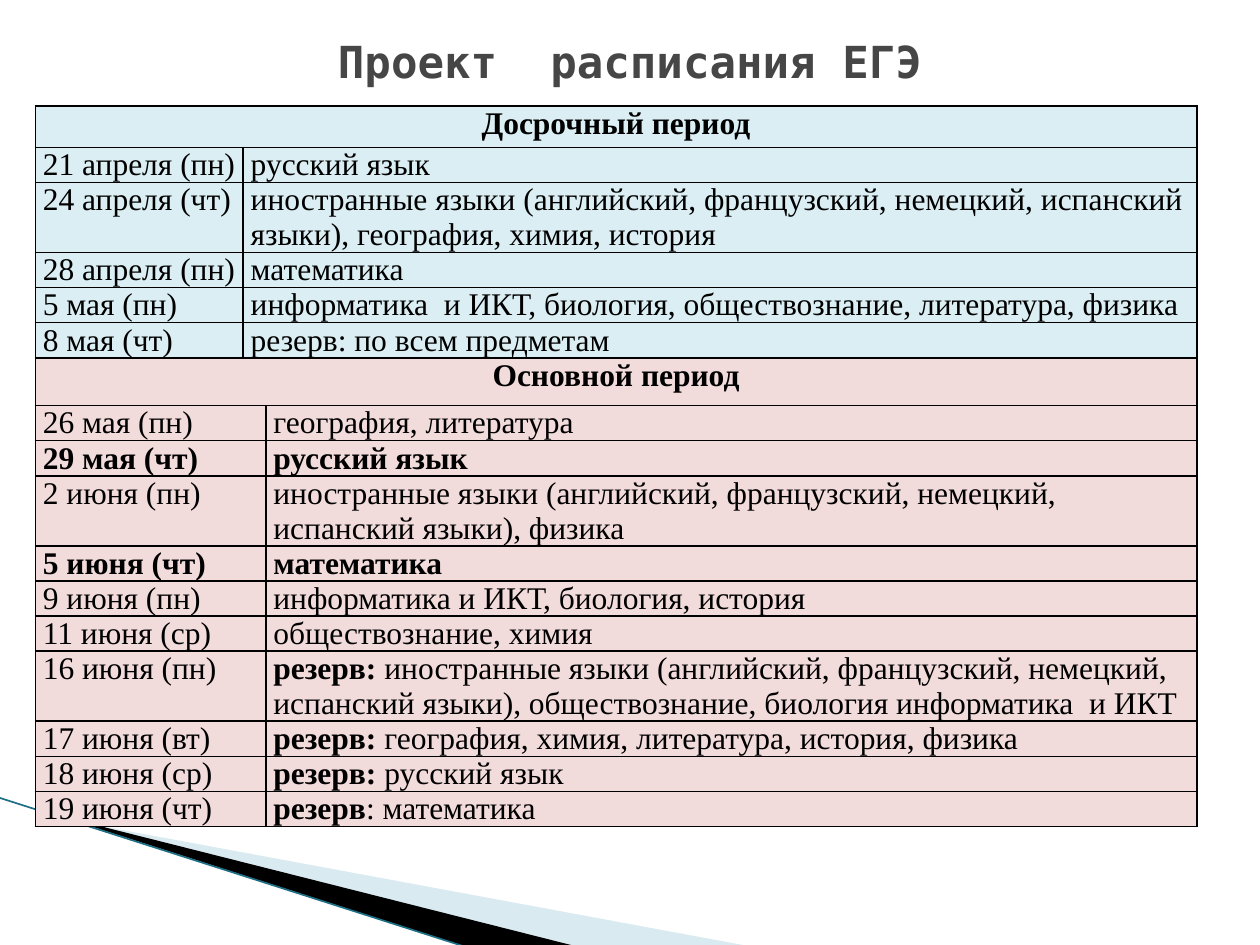
from lxml import etree
from pptx import Presentation
from pptx.dml.color import RGBColor
from pptx.enum.shapes import MSO_CONNECTOR
from pptx.enum.text import MSO_ANCHOR, MSO_AUTO_SIZE, PP_ALIGN
from pptx.oxml import parse_xml
from pptx.oxml.ns import nsdecls, qn
from pptx.util import Inches, Pt

STRAIGHT = MSO_CONNECTOR.STRAIGHT
MIDDLE = MSO_ANCHOR.MIDDLE
NO_FIT = MSO_AUTO_SIZE.NONE
LEFT, CENTER = PP_ALIGN.LEFT, PP_ALIGN.CENTER

BLACK = RGBColor(0x00, 0x00, 0x00)
GRAY = RGBColor(0x46, 0x46, 0x46)
EARLY_BLUE = RGBColor(0xDA, 0xEE, 0xF3)
MAIN_PINK = RGBColor(0xF2, 0xDB, 0xDB)
WEDGE_BLUE = RGBColor(0xA0, 0xCB, 0xDC)
LINE_TEAL = RGBColor(0x1D, 0x6F, 0x85)

COLUMNS = [1.65, 0.18, 7.39]
ROW_HEIGHT = 0.24

EARLY = [
    ("21 апреля (пн)", "", "русский язык"),
    ("24 апреля (чт)", "", "иностранные языки (английский, французский, немецкий, "
     "испанский языки), география, химия, история"),
    ("28 апреля (пн)", "", "математика"),
    ("5 мая (пн)", "", "информатика  и ИКТ, биология, обществознание, литература, физика"),
    ("8 мая (чт)", "", "резерв: по всем предметам"),
]
MAIN = [
    ("26 мая (пн)", "", "география, литература"),
    ("29 мая (чт)", "русский язык", ""),
    ("2 июня (пн)", "", "иностранные языки (английский, французский, немецкий, "
     "испанский языки), физика"),
    ("5 июня (чт)", "математика", ""),
    ("9 июня (пн)", "", "информатика и ИКТ, биология, история"),
    ("11 июня (ср)", "", "обществознание, химия"),
    ("16 июня (пн)", "резерв: ", "иностранные языки (английский, французский, немецкий, "
     "испанский языки), обществознание, биология информатика  и ИКТ"),
    ("17 июня (вт)", "резерв:", " география, химия, литература, история, физика"),
    ("18 июня (ср)", "резерв: ", "русский язык"),
    ("19 июня (чт)", "резерв", ": математика"),
]
PERIODS = [
    ("Досрочный период", 0.33, EARLY_BLUE, 1, EARLY),
    ("Основной период", 0.38, MAIN_PINK, 2, MAIN),
]


def add_text(p, text, size=18, font="Times New Roman", color=BLACK, bold=False,
             align=LEFT, spacing=None):
    p.alignment = align
    if spacing:
        p.line_spacing = Pt(spacing)
    r = p.add_run()
    r.text = text
    r.font.size = Pt(size)
    r.font.name = font
    r.font.color.rgb = color
    r.font.bold = bold


def add_wedge(s, points, color, alpha=None):
    start, *rest = [(Inches(x), Inches(y)) for x, y in points]
    builder = s.shapes.build_freeform(*start)
    builder.add_line_segments(rest, close=True)
    sp = builder.convert_to_shape()
    sp.shadow.inherit = False
    sp.fill.solid()
    sp.fill.fore_color.rgb = color
    sp.line.fill.background()
    if alpha:
        clr = sp._element.spPr.find(qn("a:solidFill")).find(qn("a:srgbClr"))
        etree.SubElement(clr, qn("a:alpha")).set("val", str(alpha * 1000))


def add_line(s, x1, y1, x2, y2, color, width):
    line = s.shapes.add_connector(STRAIGHT, Inches(x1), Inches(y1), Inches(x2), Inches(y2))
    line.line.color.rgb = color
    line.line.width = Pt(width)
    etree.SubElement(line._element.spPr, qn("a:effectLst"))


def format_cell(cell, color):
    cell.margin_left = cell.margin_right = Inches(0.06)
    cell.margin_top = cell.margin_bottom = 0
    cell.fill.solid()
    cell.fill.fore_color.rgb = color
    tcPr = cell._tc.get_or_add_tcPr()
    for i, side in enumerate(("lnL", "lnR", "lnT", "lnB")):
        tcPr.insert(i, parse_xml(
            f'<a:{side} {nsdecls("a")} w="{Pt(1)}"><a:solidFill>'
            f'<a:srgbClr val="{BLACK}"/></a:solidFill></a:{side}>'))


def fill_cell(cell, *runs, align=LEFT):
    p = cell.text_frame.paragraphs[0]
    for text, bold in runs:
        if text:
            add_text(p, text, bold=bold, align=align, spacing=20)


def shrink_spanned(table):
    for cell in table.iter_cells():
        if cell.is_spanned:
            p = cell.text_frame.paragraphs[0]
            etree.SubElement(p._p, qn("a:endParaRPr")).set("sz", "1000")


def add_schedule(s):
    count = sum(1 + len(rows) for *_, rows in PERIODS)
    table = s.shapes.add_table(count, len(COLUMNS), Inches(0.28), Inches(0.84),
                               Inches(sum(COLUMNS)), Inches(ROW_HEIGHT * count)).table
    for column, width in zip(table.columns, COLUMNS):
        column.width = Inches(width)
    row = 0
    for heading, height, color, subject, entries in PERIODS:
        for i in range(row, row + 1 + len(entries)):
            table.rows[i].height = Inches(ROW_HEIGHT)
            for j in range(len(COLUMNS)):
                format_cell(table.cell(i, j), color)
        table.rows[row].height = Inches(height)
        table.cell(row, 0).merge(table.cell(row, 2))
        fill_cell(table.cell(row, 0), (heading, True), align=CENTER)
        for i, (date, strong, plain) in enumerate(entries, row + 1):
            table.cell(i, 2 - subject).merge(table.cell(i, 3 - subject))
            fill_cell(table.cell(i, 0), (date, not plain))
            fill_cell(table.cell(i, subject), (strong, True), (plain, False))
        row += 1 + len(entries)
    shrink_spanned(table)


def set_title(s, text):
    sp = s.shapes.title
    sp.left, sp.top, sp.width, sp.height = Inches(0.5), Inches(0.21), Inches(9), Inches(0.55)
    tf = sp.text_frame
    tf.word_wrap = True
    tf.auto_size = NO_FIT
    tf.vertical_anchor = MIDDLE
    add_text(tf.paragraphs[0], text, size=25.2, font="DejaVu Sans Mono", color=GRAY,
             bold=True, align=CENTER)


def main():
    prs = Presentation()
    prs.slide_width, prs.slide_height = Inches(10), Inches(7.5)
    s = prs.slides.add_slide(prs.slide_layouts[5])
    add_wedge(s, [(0.55, 6.51), (5.95, 7.51), (4.56, 7.51), (0.55, 6.5)], WEDGE_BLUE, alpha=40)
    add_wedge(s, [(0.53, 6.49), (4.57, 7.51), (3.72, 7.52), (0.54, 6.5)], BLACK)
    add_line(s, -0.01, 6.33, 3.71, 7.52, LINE_TEAL, 0.95)
    add_schedule(s)
    set_title(s, "Проект  расписания ЕГЭ")
    prs.save("out.pptx")


if __name__ == "__main__":
    main()
